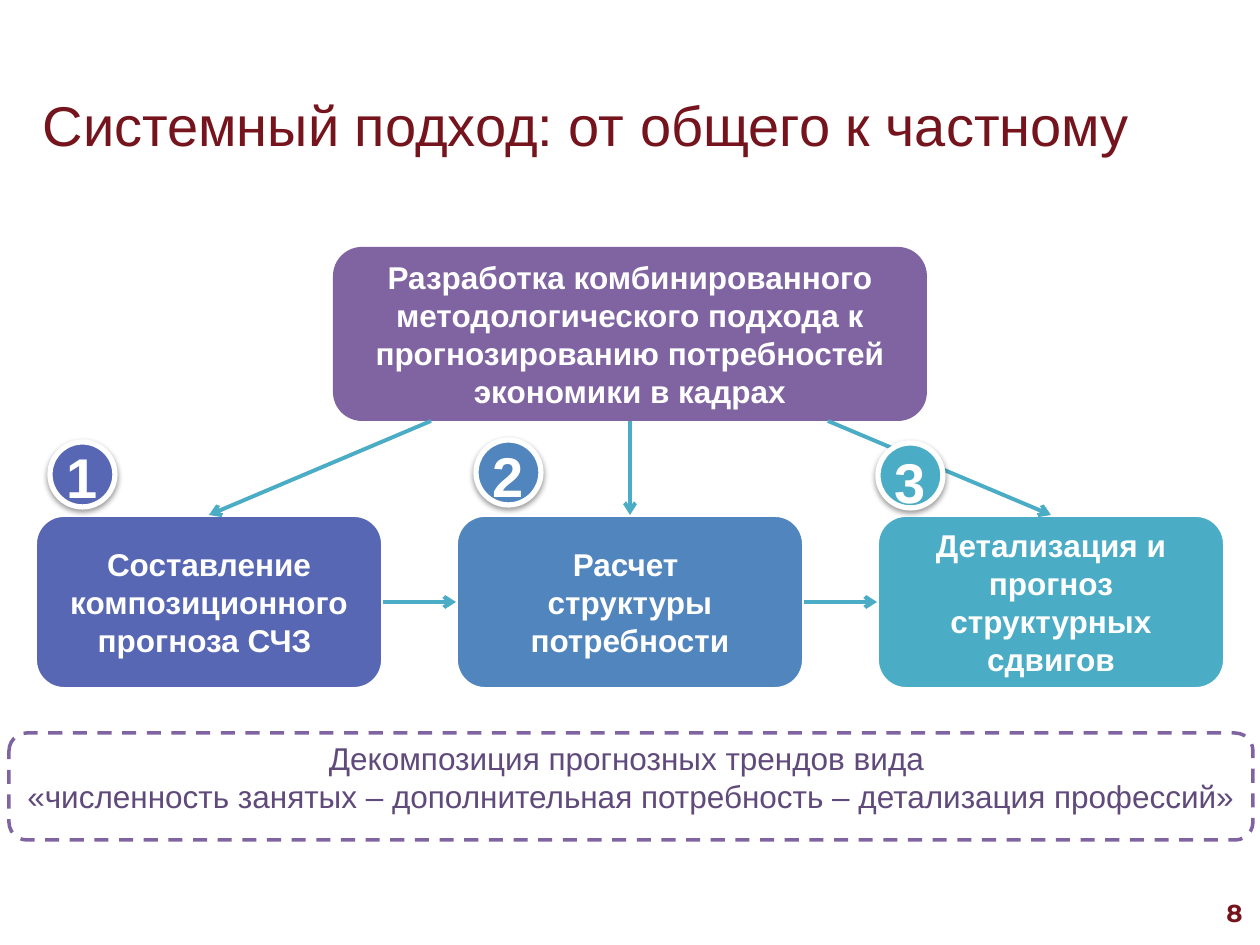
from lxml import etree
from pptx import Presentation
from pptx.dml.color import RGBColor
from pptx.enum.dml import MSO_LINE
from pptx.enum.shapes import MSO_CONNECTOR, MSO_SHAPE
from pptx.enum.text import MSO_ANCHOR, PP_ALIGN
from pptx.oxml.ns import qn
from pptx.util import Pt

ROUNDED, OVAL = MSO_SHAPE.ROUNDED_RECTANGLE, MSO_SHAPE.OVAL
STRAIGHT = MSO_CONNECTOR.STRAIGHT
DASH = MSO_LINE.DASH
LEFT, CENTER, RIGHT = PP_ALIGN.LEFT, PP_ALIGN.CENTER, PP_ALIGN.RIGHT
TOP, MIDDLE = MSO_ANCHOR.TOP, MSO_ANCHOR.MIDDLE
SIDE_TOP, SIDE_LEFT, SIDE_BOTTOM, SIDE_RIGHT = range(4)

PX_PER_INCH = 126
MAROON, PURPLE, DARK_PURPLE = "76141D", "8064A2", "604A7B"
INDIGO, BLUE, TEAL, WHITE = "5767B4", "5185BD", "4BACC6", "FFFFFF"


def px(*lengths):
    return [round(length * 914400 / PX_PER_INCH) for length in lengths]


def color(hex_string):
    return RGBColor.from_string(hex_string)


def write(frame, text, size=18, ink=WHITE, bold=False, font="Arial",
          align=CENTER, anchor=MIDDLE, wrap=True):
    """Fill a text frame: \\n starts a paragraph, \\v breaks a line."""
    frame.text = text
    frame.word_wrap = wrap
    frame.vertical_anchor = anchor
    for paragraph in frame.paragraphs:
        paragraph.alignment = align
        for run in paragraph.runs:
            run.font.name = font
            run.font.size = Pt(size)
            run.font.bold = bold
            run.font.color.rgb = color(ink)


class Deck:
    def __init__(self, width, height):
        self.presentation = Presentation()
        self.presentation.slide_width, self.presentation.slide_height = px(width, height)
        self.slide = self.presentation.slides.add_slide(
            self.presentation.slide_layouts[5])
        self.shapes = self.slide.shapes

    def title(self, text, box, **style):
        heading = self.shapes.title
        heading.left, heading.top, heading.width, heading.height = px(*box)
        write(heading.text_frame, text, **style)

    def shape(self, preset, box, fill=None, line=None, weight=1, dash=None):
        shape = self.shapes.add_shape(preset, *px(*box))
        shape.shadow.inherit = False
        if fill:
            shape.fill.solid()
            shape.fill.fore_color.rgb = color(fill)
        else:
            shape.fill.background()
        if line:
            shape.line.color.rgb = color(line)
            shape.line.width = Pt(weight)
            shape.line.dash_style = dash
        else:
            shape.line.fill.background()
        return shape

    def block(self, text, box, fill, **outline):
        block = self.shape(ROUNDED, box, fill, **outline)
        write(block.text_frame, text, bold=True)
        return block

    def label(self, text, box, **style):
        write(self.shapes.add_textbox(*px(*box)).text_frame, text, **style)

    def badge(self, number, left, top, fill, text_top):
        disc = self.shape(OVAL, (left, top, 65, 65), fill, WHITE, 3)
        effects = disc._element.spPr.find(qn("a:effectLst"))
        shadow = etree.SubElement(effects, qn("a:outerShdw"), blurRad="40000",
                                  dist="20000", dir="5400000", rotWithShape="0")
        black = etree.SubElement(shadow, qn("a:srgbClr"), val="000000")
        etree.SubElement(black, qn("a:alpha"), val="38000")
        self.label(number, (left + 4, text_top, 57, 81), size=32, bold=True,
                   align=LEFT, anchor=TOP, wrap=False)

    def arrow(self, source, source_side, target, target_side, start=None):
        """Join two blocks; start is a free point instead of the source side."""
        x, y = px(*(start or (0, 0)))
        arrow = self.shapes.add_connector(STRAIGHT, x, y, x, y)
        if start is None:
            arrow.begin_connect(source, source_side)
        arrow.end_connect(target, target_side)
        arrow.line.color.rgb = color(TEAL)
        arrow.line.width = Pt(2.25)
        etree.SubElement(arrow.line._get_or_add_ln(), qn("a:tailEnd"), type="arrow")
        etree.SubElement(arrow._element.spPr, qn("a:effectLst"))


def main():
    deck = Deck(1260, 945)
    deck.title("Системный подход: от общего к частному", (30, 45, 1113, 158),
               size=32, ink=MAROON)

    # Overall approach and its three steps
    approach = deck.block(
        "Разработка комбинированного методологического подхода к "
        "прогнозированию потребностей экономики в кадрах",
        (333, 247, 594, 174), PURPLE)
    step_texts = [
        ("Составление композиционного прогноза СЧЗ ", INDIGO),
        ("Расчет \nструктуры потребности", BLUE),
        ("Детализация и прогноз структурных сдвигов", TEAL),
    ]
    steps = [
        deck.block(text, (35 + 421 * i, 515, 348, 174), fill, line=WHITE, weight=2.25)
        for i, (text, fill) in enumerate(step_texts)
    ]

    # Arrows from the approach down to the steps, then from step to step
    for step, start in zip(steps, [(431, 421), None, (828, 421)]):
        deck.arrow(approach, SIDE_BOTTOM, step, SIDE_TOP, start)
    for step, following in zip(steps, steps[1:]):
        deck.arrow(step, SIDE_RIGHT, following, SIDE_LEFT)

    # Step numbers
    deck.badge("1", 50, 442, INDIGO, text_top=436)
    deck.badge("2", 476, 440, BLUE, text_top=435)
    deck.badge("3", 878, 443, TEAL, text_top=441)

    # Conclusion in a dashed frame
    deck.shape(ROUNDED, (9, 733, 1244, 107), line=PURPLE, weight=2, dash=DASH)
    deck.label("Декомпозиция прогнозных трендов вида \v"
               "«численность занятых – дополнительная потребность – детализация профессий»",
               (9, 733, 1244, 89), ink=DARK_PURPLE, anchor=TOP, wrap=False)

    # Page number
    deck.label("8", (961, 888, 294, 50), size=14, ink=MAROON, bold=True,
               font="Montserrat", align=RIGHT)

    deck.presentation.save("out.pptx")


if __name__ == "__main__":
    main()
